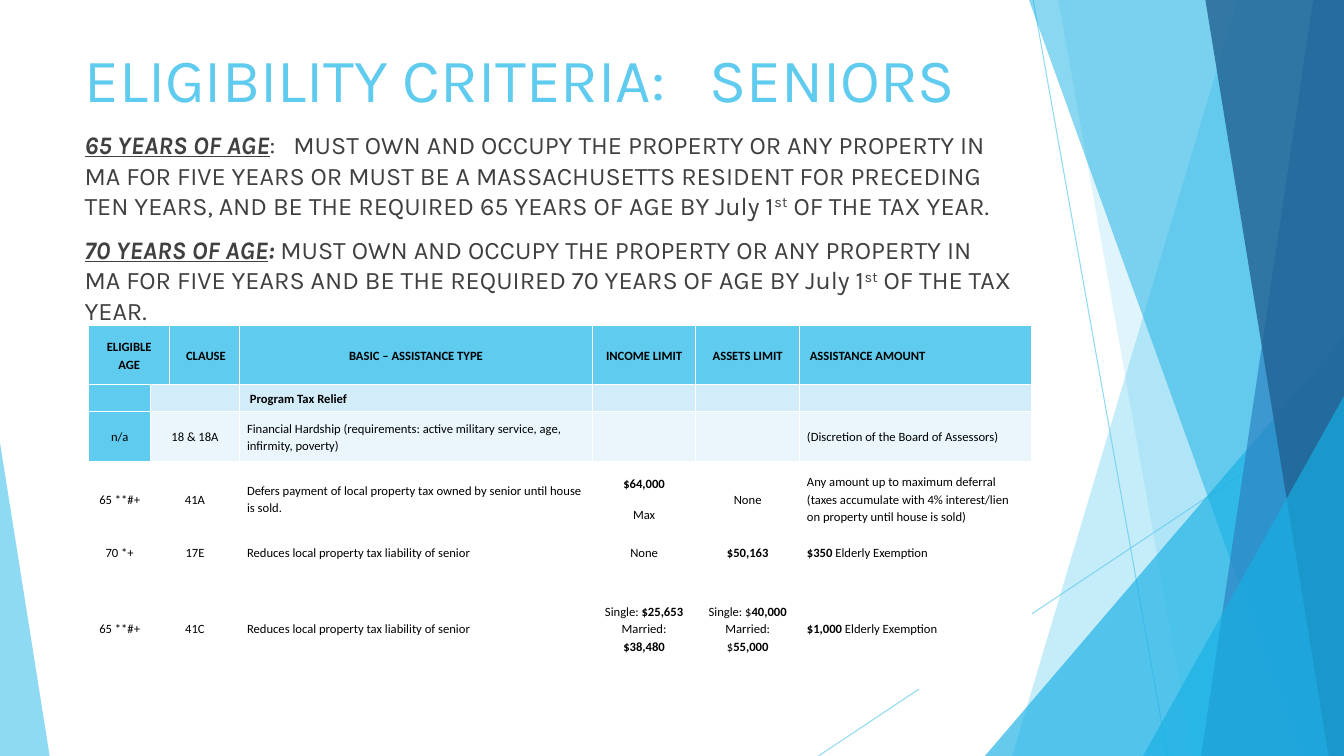
from lxml.etree import SubElement
from pptx import Presentation
from pptx.dml.color import RGBColor
from pptx.enum.shapes import MSO_CONNECTOR, MSO_SHAPE
from pptx.enum.text import MSO_ANCHOR, PP_ALIGN
from pptx.oxml import parse_xml
from pptx.oxml.ns import nsdecls, qn
from pptx.util import Pt

SKY, CYAN, BLUE, NAVY = "5FCBEF", "17B0E4", "2E83C3", "226292"
PALE, PALEST, WHITE = "D2ECF9", "EAF6FC", "FFFFFF"
INK, BLACK = "404040", "000000"
PAGE_WIDTH, PAGE_HEIGHT = 960, 540

RAYS = [
    ("line", (738, 0, 834, 540), SKY, 70),
    ("line", (960, 290, 584.6, 540), SKY, 70),
    ("band", (884, 723), SKY, 36),
    ("band", (756, 852), SKY, 20),
    ("triangle", (703.5, 240, 256.5, 300, 1), CYAN, 66),
    ("band", (735, 929.5), CYAN, 50),
    ("band", (938, 858), BLUE, 70),
    ("band", (861, 949), NAVY, 80),
    ("triangle", (816.5, 283, 143.5, 257, 1), CYAN, 66),
    ("triangle", (0, 316, 35.5, 224, 0), SKY, 70),
]

RULES = [
    [("65 YEARS OF AGE", "biu"),
     (":   MUST OWN AND OCCUPY THE PROPERTY OR ANY PROPERTY IN MA FOR FIVE YEARS "
      "OR MUST BE A MASSACHUSETTS RESIDENT FOR PRECEDING TEN YEARS, AND BE THE "
      "REQUIRED 65 YEARS OF AGE BY July 1", ""),
     ("st", "s"), (" OF THE TAX YEAR.", "")],
    [("70 YEARS OF AGE", "biu"), (": ", "bi"),
     ("MUST OWN AND OCCUPY THE PROPERTY OR ANY PROPERTY IN MA FOR FIVE YEARS "
      "AND BE THE REQUIRED 70 YEARS OF AGE BY July 1", ""),
     ("st", "s"), (" OF THE TAX YEAR.", "")],
]

COLUMN_WIDTHS = [44, 7, 50, 252, 74, 74, 166]
ROW_HEIGHTS = [42, 19.5, 35.5, 53.5, 23.5, 85]
ROW_FILLS = [SKY, PALE, PALEST, WHITE, WHITE, WHITE]
LEFT_COLUMNS = (3, 6)
REDUCES = "Reduces local property tax liability of senior"
ROWS = [
    ["|ELIGIBLE AGE|", None, "| CLAUSE|", "|BASIC – ASSISTANCE TYPE|",
     "|INCOME LIMIT|", "|ASSETS LIMIT|", "| ASSISTANCE AMOUNT|"],
    ["", "", None, "| Program Tax Relief|", "", "", ""],
    ["n/a", "18 & 18A", None,
     "Financial Hardship (requirements: active military service, age, infirmity, poverty)",
     "", "", "(Discretion of the Board of Assessors)"],
    ["65 **#+", "41A", None,
     "Defers payment of local property tax owned by senior until house is sold.",
     ("|$64,000|", "Max"), "None",
     "Any amount up to maximum deferral (taxes accumulate with 4% interest/lien "
     "on property until house is sold)"],
    ["70 *+", "17E", None, REDUCES, "None", "|$50,163|", "|$350| Elderly Exemption"],
    ["65 **#+", "41C", None, REDUCES, "Single: |$25,653|\nMarried:\n|$38,480|",
     "Single: $|40,000|\nMarried:\n$|55,000|", "|$1,000| Elderly Exemption"],
]


def paint(color_format, color):
    color_format.rgb = RGBColor.from_string(color)


def set_alpha(shape, alpha):
    color = shape._element.spPr.find(".//" + qn("a:srgbClr"))
    SubElement(color, qn("a:alpha"), val=str(alpha * 1000))


def set_font(paragraph, name, size, color):
    paragraph.font.name = name
    paragraph.font.size = Pt(size)
    paint(paragraph.font.color, color)


def fill_shape(shape, color, alpha):
    shape.shadow.inherit = False
    shape.fill.solid()
    paint(shape.fill.fore_color, color)
    set_alpha(shape, alpha)
    shape.line.fill.background()


def add_line(page, ends, color, alpha):
    line = page.shapes.add_connector(MSO_CONNECTOR.STRAIGHT, *map(Pt, ends))
    line.line.width = Pt(0.75)
    paint(line.line.color, color)
    set_alpha(line, alpha)
    SubElement(line._element.spPr, qn("a:effectLst"))


def add_band(page, edge, color, alpha):
    top_left, bottom_left = edge
    builder = page.shapes.build_freeform(Pt(top_left), 0)
    corners = [(PAGE_WIDTH, 0), (PAGE_WIDTH, PAGE_HEIGHT), (bottom_left, PAGE_HEIGHT)]
    builder.add_line_segments([(Pt(x), Pt(y)) for x, y in corners])
    fill_shape(builder.convert_to_shape(), color, alpha)


def add_triangle(page, place, color, alpha):
    *frame, apex = place
    triangle = page.shapes.add_shape(MSO_SHAPE.ISOSCELES_TRIANGLE, *map(Pt, frame))
    triangle.adjustments[0] = apex
    fill_shape(triangle, color, alpha)


def add_title(page, text):
    title = page.shapes.title
    title.left, title.top, title.width, title.height = map(Pt, (53.3, 11.5, 677, 88))
    title.text_frame.text = text
    title.text_frame.vertical_anchor = MSO_ANCHOR.MIDDLE
    paragraph = title.text_frame.paragraphs[0]
    paragraph.alignment = PP_ALIGN.LEFT
    set_font(paragraph, "Karla", 44, SKY)


def add_rules(page):
    box = page.shapes.add_textbox(*map(Pt, (53.3, 79.3, 677, 166.3)))
    frame = box.text_frame
    frame.word_wrap = True
    frame.vertical_anchor = MSO_ANCHOR.MIDDLE
    for index, spans in enumerate(RULES):
        paragraph = frame.add_paragraph() if index else frame.paragraphs[0]
        paragraph.space_before = Pt(10)
        set_font(paragraph, "Karla", 18, INK)
        for text, style in spans:
            span = paragraph.add_run()
            span.text = text
            span.font.bold = "b" in style
            span.font.italic = "i" in style
            span.font.underline = "u" in style
            if "s" in style:
                span._r.get_or_add_rPr().set("baseline", "30000")


def add_borders(cell):
    properties = cell._tc.get_or_add_tcPr()
    for position, side in enumerate("LRTB"):
        properties.insert(position, parse_xml(
            f'<a:ln{side} {nsdecls("a")} w="{Pt(1)}"><a:solidFill>'
            f'<a:srgbClr val="{WHITE}"/></a:solidFill></a:ln{side}>'))


def write_cell(cell, content, alignment):
    cell.margin_left = cell.margin_right = Pt(5.4)
    cell.margin_top = cell.margin_bottom = 0
    cell.vertical_anchor = MSO_ANCHOR.MIDDLE
    texts = content if isinstance(content, tuple) else (content,)
    for index, text in enumerate(texts):
        paragraph = cell.text_frame.add_paragraph() if index else cell.text_frame.paragraphs[0]
        paragraph.alignment = alignment
        paragraph.line_spacing = 1.15 if text else Pt(10)
        paragraph.space_before = Pt(10 if index else 0)
        set_font(paragraph, "Calibri", 9, BLACK)
        for number, line in enumerate(text.split("\n")):
            if number:
                paragraph.add_line_break()
            for order, piece in enumerate(line.split("|")):
                if piece:
                    span = paragraph.add_run()
                    span.text = piece
                    span.font.bold = order % 2 == 1


def add_relief_table(page):
    place = map(Pt, (63.5, 232.5, sum(COLUMN_WIDTHS), sum(ROW_HEIGHTS)))
    table = page.shapes.add_table(len(ROWS), len(COLUMN_WIDTHS), *place).table
    for column, width in zip(table.columns, COLUMN_WIDTHS):
        column.width = Pt(width)
    for row, height in zip(table.rows, ROW_HEIGHTS):
        row.height = Pt(height)
    for r, contents in enumerate(ROWS):
        merged = contents.index(None)
        table.cell(r, merged - 1).merge(table.cell(r, merged))
        for c, content in enumerate(contents):
            cell = table.cell(r, c)
            cell.fill.solid()
            paint(cell.fill.fore_color, SKY if c == 0 and r < 3 else ROW_FILLS[r])
            add_borders(cell)
            left = c in LEFT_COLUMNS and (r, c) != (0, 3)
            write_cell(cell, content or "", PP_ALIGN.LEFT if left else PP_ALIGN.CENTER)


def main():
    deck = Presentation()
    deck.slide_width, deck.slide_height = Pt(PAGE_WIDTH), Pt(PAGE_HEIGHT)
    page = deck.slides.add_slide(deck.slide_layouts[5])
    draw = {"line": add_line, "band": add_band, "triangle": add_triangle}
    for kind, place, color, alpha in RAYS:
        draw[kind](page, place, color, alpha)
    add_title(page, "ELIGIBILITY CRITERIA:   SENIORS")
    add_rules(page)
    add_relief_table(page)
    deck.save("out.pptx")


if __name__ == "__main__":
    main()
